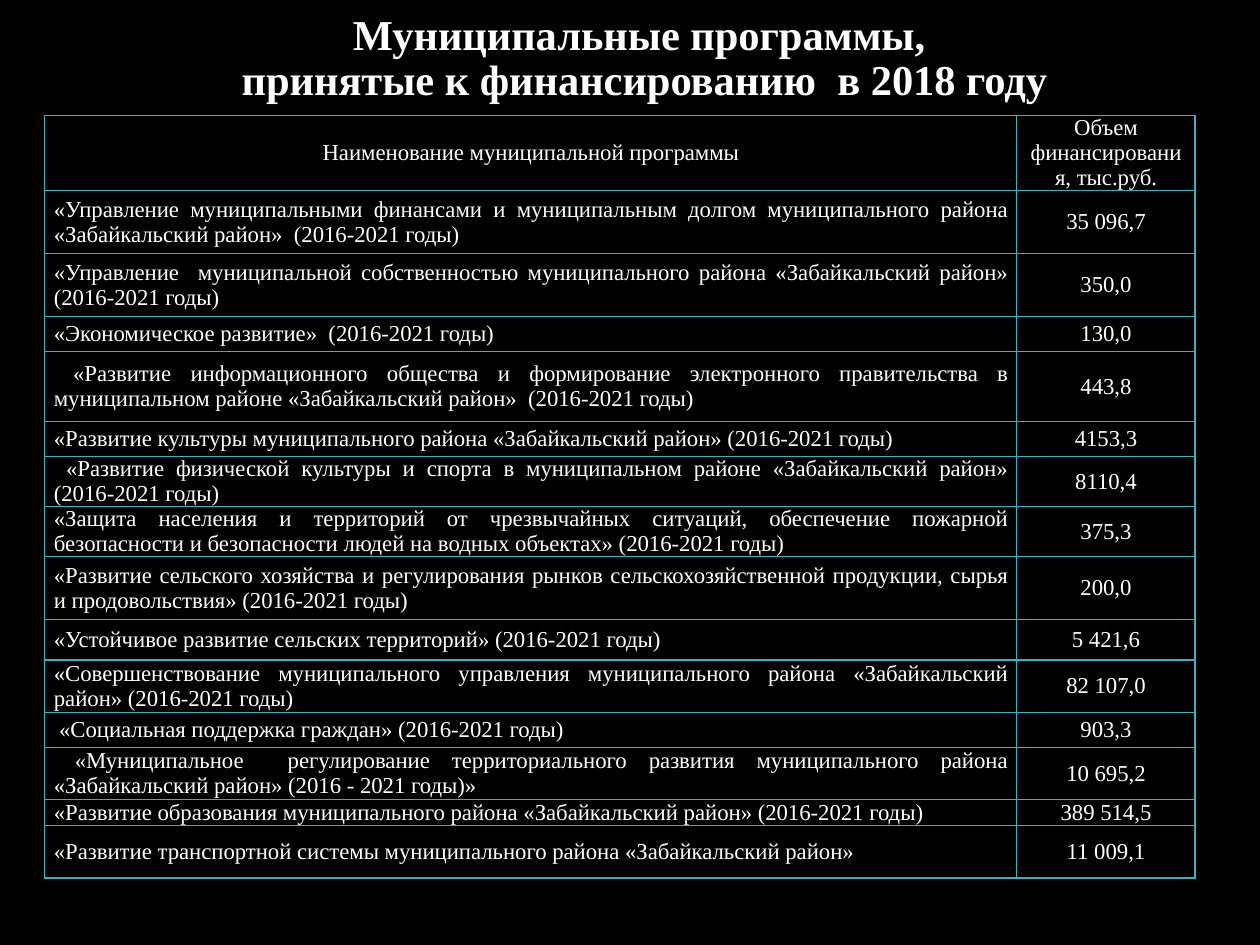
from typing import NamedTuple

from lxml.etree import SubElement
from pptx import Presentation
from pptx.dml.color import RGBColor as Rgb
from pptx.enum.text import MSO_ANCHOR as Anchor, PP_ALIGN as Align
from pptx.oxml.ns import qn
from pptx.util import Pt

COLORS = {"background": "000000", "text": "FFFFFF", "border": "41AEBD"}
FONT = "Times New Roman"
TITLE_FORMAT = {"name": FONT, "size": Pt(24.3), "bold": True}
CELL_FORMAT = {"name": FONT, "size": Pt(13), "bold": False}
CELL_LAYOUT = {
    "vertical_anchor": Anchor.MIDDLE,
    "margin_left": Pt(5.4),
    "margin_right": Pt(5.4),
    "margin_top": Pt(0),
    "margin_bottom": Pt(0),
}
TITLE_LINES = ["Муниципальные программы, ", "принятые к финансированию  в 2018 году"]
HEADERS = ["Наименование муниципальной программы", "Объем финансирования, тыс.руб."]
HEADER_HEIGHT = 42.9
LINE_HEIGHT = 14.3
COLUMN_WIDTHS = [555.6, 102]


class Program(NamedTuple):
    name: str
    amount: str
    height: float
    indent: float = 0


PROGRAMS = [
    Program("«Управление муниципальными финансами и муниципальным долгом муниципального района "
            "«Забайкальский район»  (2016-2021 годы)", "35 096,7", 36),
    Program("«Управление  муниципальной собственностью муниципального района "
            "«Забайкальский район» (2016-2021 годы)", "350,0", 36),
    Program("«Экономическое развитие»  (2016-2021 годы)", "130,0", 20),
    Program("«Развитие информационного общества и формирование электронного правительства "
            "в муниципальном районе «Забайкальский район»  (2016-2021 годы)", "443,8", 40, 11),
    Program("«Развитие культуры муниципального района «Забайкальский район» (2016-2021 годы)",
            "4153,3", 20),
    Program("«Развитие физической культуры и спорта в муниципальном районе "
            "«Забайкальский район» (2016-2021 годы)", "8110,4", 28.6, 7),
    Program("«Защита населения и территорий от чрезвычайных ситуаций, обеспечение пожарной "
            "безопасности и безопасности людей на водных объектах» (2016-2021 годы)",
            "375,3", 28.6),
    Program("«Развитие сельского хозяйства и регулирования рынков сельскохозяйственной "
            "продукции, сырья и продовольствия» (2016-2021 годы)", "200,0", 36),
    Program("«Устойчивое развитие сельских территорий» (2016-2021 годы)", "5 421,6", 23),
    Program("«Совершенствование муниципального управления муниципального района "
            "«Забайкальский район» (2016-2021 годы)", "82 107,0", 30),
    Program("«Социальная поддержка граждан» (2016-2021 годы)", "903,3", 20, 3),
    Program("«Муниципальное  регулирование территориального развития муниципального района "
            "«Забайкальский район» (2016 - 2021 годы)»", "10 695,2", 30, 12),
    Program("«Развитие образования муниципального района «Забайкальский район» "
            "(2016-2021 годы)", "389 514,5", 14.6),
    Program("«Развитие транспортной системы муниципального района «Забайкальский район»",
            "11 009,1", 30),
]


def apply_format(target, values: dict) -> None:
    for name, value in values.items():
        setattr(target, name, value)


def format_font(font, values: dict) -> None:
    apply_format(font, values)
    font.color.rgb = Rgb.from_string(COLORS["text"])


def add_borders(cell) -> None:
    properties = cell._tc.get_or_add_tcPr()
    for index, side in enumerate(("a:lnL", "a:lnR", "a:lnT", "a:lnB")):
        line = SubElement(properties, qn(side), w=str(Pt(1)))
        fill = SubElement(line, qn("a:solidFill"))
        SubElement(fill, qn("a:srgbClr"), val=COLORS["border"])
        # Border lines come before the cell fill in the schema
        properties.insert(index, line)


def fill_cell(cell, text: str, alignment: Align, indent: float = 0) -> None:
    apply_format(cell, CELL_LAYOUT)
    cell.fill.solid()
    cell.fill.fore_color.rgb = Rgb.from_string(COLORS["background"])
    add_borders(cell)
    paragraph = cell.text_frame.paragraphs[0]
    apply_format(paragraph, {"alignment": alignment, "line_spacing": Pt(LINE_HEIGHT)})
    if indent:
        paragraph._p.get_or_add_pPr().set("indent", str(Pt(indent)))
    run = paragraph.add_run()
    run.text = text
    format_font(run.font, CELL_FORMAT)


def add_title(slide) -> None:
    frame = slide.shapes.add_textbox(Pt(16.6), Pt(11.5), Pt(703.4), Pt(44.6)).text_frame
    apply_format(frame, {"word_wrap": True, "vertical_anchor": Anchor.MIDDLE})
    paragraph = frame.paragraphs[0]
    apply_format(paragraph, {"alignment": Align.CENTER, "line_spacing": 0.9})
    for index, text in enumerate(TITLE_LINES):
        if index:
            paragraph.add_line_break()
        run = paragraph.add_run()
        run.text = text
        format_font(run.font, TITLE_FORMAT)


def add_program_table(slide) -> None:
    heights = [HEADER_HEIGHT] + [program.height for program in PROGRAMS]
    table = slide.shapes.add_table(
        len(heights), len(COLUMN_WIDTHS), Pt(25.4), Pt(66),
        Pt(sum(COLUMN_WIDTHS)), Pt(sum(heights))).table
    for column, width in zip(table.columns, COLUMN_WIDTHS):
        column.width = Pt(width)
    for row, height in zip(table.rows, heights):
        row.height = Pt(height)
    for index, text in enumerate(HEADERS):
        fill_cell(table.cell(0, index), text, Align.CENTER)
    for index, program in enumerate(PROGRAMS, start=1):
        fill_cell(table.cell(index, 0), program.name, Align.JUSTIFY, program.indent)
        fill_cell(table.cell(index, 1), program.amount, Align.CENTER)


def main() -> None:
    presentation = Presentation()
    presentation.slide_width, presentation.slide_height = Pt(720), Pt(540)
    slide = presentation.slides.add_slide(presentation.slide_layouts[6])

    # Background
    background = slide.background.fill
    background.solid()
    background.fore_color.rgb = Rgb.from_string(COLORS["background"])

    # Title and table
    add_title(slide)
    add_program_table(slide)
    presentation.save("out.pptx")


if __name__ == "__main__":
    main()
